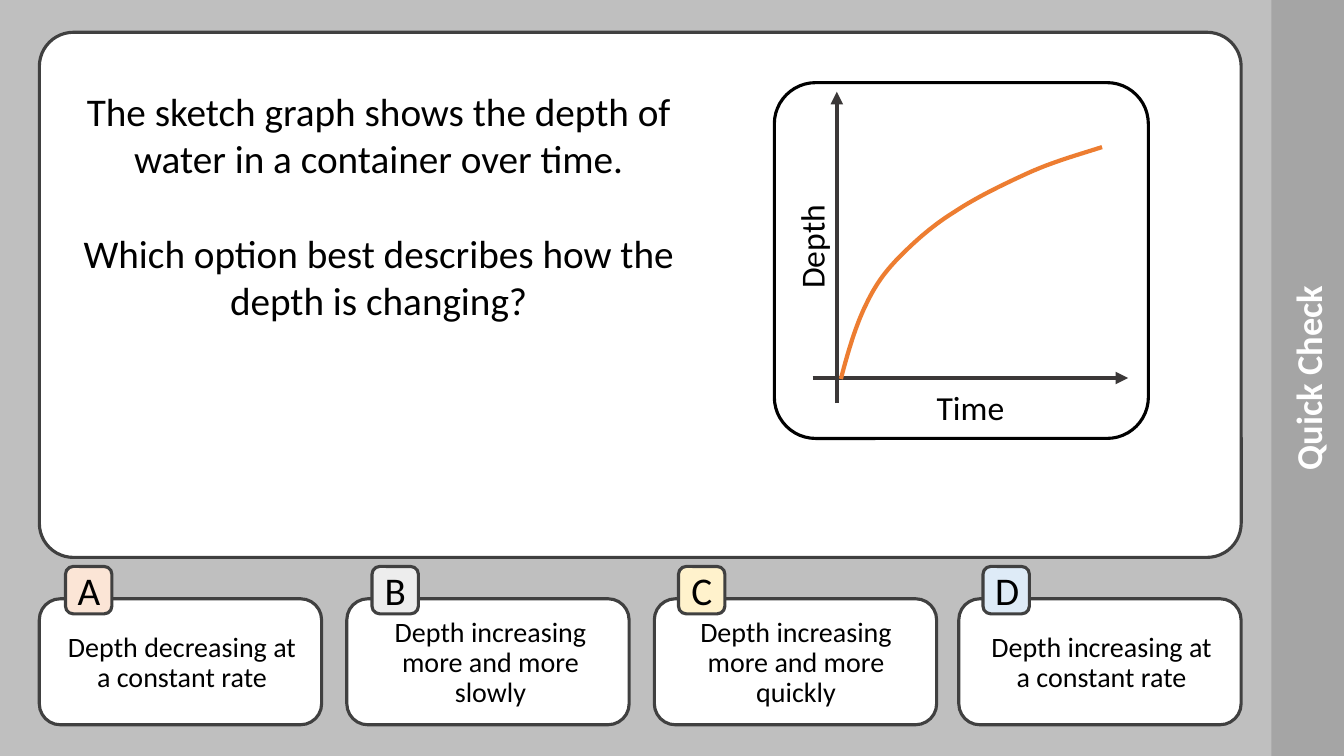
from dataclasses import dataclass

from lxml import etree
from pptx import Presentation
from pptx.dml.color import RGBColor
from pptx.enum.shapes import MSO_CONNECTOR, MSO_SHAPE
from pptx.enum.text import MSO_ANCHOR, MSO_AUTO_SIZE, PP_ALIGN
from pptx.oxml.ns import qn
from pptx.util import Inches, Pt

HUES = {
    "back": "BFBFBF", "band": "A5A5A5", "white": "FFFFFF", "black": "000000",
    "edge": "404040", "axis": "3B3838", "curve": "ED7D31",
    "A": "FBE5D6", "B": "EDEDED", "C": "FFF2CC", "D": "DEEBF7",
}
INSETS = ("margin_left", "margin_top", "margin_right", "margin_bottom")

Box = tuple[float, float, float, float]
Point = tuple[float, float]


@dataclass
class Answer:
    key: str
    text: str
    card: float
    badge: float
    label: float


@dataclass
class Axis:
    start: Point
    end: Point


ANSWERS = [
    Answer("A", "Depth decreasing at a constant rate", 0.39, 0.65, 0.65),
    Answer("B", "Depth increasing more and more slowly", 3.44, 3.69, 3.71),
    Answer("C", "Depth increasing more and more quickly", 6.49, 6.73, 6.74),
    Answer("D", "Depth increasing at a constant rate", 9.51, 9.75, 9.77),
]
AXES = [Axis((8.06, 3.75), (11.19, 3.75)), Axis((8.3, 4), (8.3, 0.91))]
QUESTION = [
    "The sketch graph shows the depth of water in a container over time.",
    "Which option best describes how the depth is changing?",
]
# Start point, then two handles and an end point per Bezier piece
CURVE = [
    (10.93, 1.46), (10.68, 1.54), (10.43, 1.61), (10.19, 1.72),
    (9.95, 1.83), (9.68, 1.96), (9.47, 2.1),
    (9.26, 2.23), (9.09, 2.38), (8.94, 2.53),
    (8.79, 2.68), (8.69, 2.81), (8.59, 3.02),
    (8.49, 3.22), (8.41, 3.49), (8.34, 3.76),
]


def tint(hue: str) -> RGBColor:
    return RGBColor.from_string(HUES[hue])


def stroke(line, hue: str, width: float) -> None:
    line.color.rgb = tint(hue)
    line.width = Pt(width)


def write(shape, lines: list[str], size: float, hue: str = "black",
          bold: bool = False, inset: bool = True, **spacing) -> None:
    """Fill a shape with centred paragraphs."""
    frame = shape.text_frame
    frame.word_wrap = True
    frame.auto_size = MSO_AUTO_SIZE.NONE
    if not inset:
        for side in INSETS:
            setattr(frame, side, 0)
    frame.text = "\n".join(lines)
    for para in frame.paragraphs:
        para.alignment = PP_ALIGN.CENTER
        for name, value in spacing.items():
            setattr(para, name, value)
        looks = {"name": "Calibri", "size": Pt(size), "bold": bold}
        for run in para.runs:
            for name, value in looks.items():
                setattr(run.font, name, value)
            run.font.color.rgb = tint(hue)


def panel(slide, box: Box, fill: str = "white", edge: str = "edge",
          bend: float = 0.1667):
    """Draw a rounded, outlined box."""
    shape = slide.shapes.add_shape(
        MSO_SHAPE.ROUNDED_RECTANGLE, *map(Inches, box))
    shape.adjustments[0] = bend
    shape.shadow.inherit = False
    shape.fill.solid()
    shape.fill.fore_color.rgb = tint(fill)
    stroke(shape.line, edge, 2.25)
    return shape


def label(slide, box: Box, lines: list[str], size: float, **looks):
    shape = slide.shapes.add_textbox(*map(Inches, box))
    write(shape, lines, size, **looks)
    return shape


def arrow(slide, axis: Axis) -> None:
    link = slide.shapes.add_connector(
        MSO_CONNECTOR.STRAIGHT, *map(Inches, axis.start + axis.end))
    stroke(link.line, "axis", 3)
    ln = link.line._get_or_add_ln()
    etree.SubElement(ln, qn("a:tailEnd"), type="triangle")
    etree.SubElement(link._element.spPr, qn("a:effectLst"))


def trace(nodes: list[Point], steps: int = 16) -> list[Point]:
    """Sample the points along a chain of cubic Bezier pieces."""
    dots = [nodes[0]]
    for i in range(0, len(nodes) - 1, 3):
        piece = nodes[i:i + 4]
        for n in range(1, steps + 1):
            t = n / steps
            parts = ((1 - t) ** 3, 3 * t * (1 - t) ** 2,
                     3 * t * t * (1 - t), t ** 3)
            dots.append((sum(w * p[0] for w, p in zip(parts, piece)),
                         sum(w * p[1] for w, p in zip(parts, piece))))
    return dots


def plot(slide) -> None:
    dots = [(Inches(x), Inches(y)) for x, y in trace(CURVE)]
    pen = slide.shapes.build_freeform(*dots[0])
    pen.add_line_segments(dots[1:], close=False)
    shape = pen.convert_to_shape()
    shape.shadow.inherit = False
    shape.fill.background()
    stroke(shape.line, "curve", 3)


def main() -> None:
    deck = Presentation()
    deck.slide_width, deck.slide_height = Inches(13.33), Inches(7.5)
    slide = deck.slides.add_slide(deck.slide_layouts[5])
    slide.background.fill.solid()
    slide.background.fill.fore_color.rgb = tint("back")

    # Side band with the title
    title = slide.shapes.title
    place = {"left": 9.22, "top": 3.39, "width": 7.5, "height": 0.72}
    for name, value in place.items():
        setattr(title, name, Inches(value))
    title.rotation = 270
    title.fill.solid()
    title.fill.fore_color.rgb = tint("band")
    write(title, ["Quick Check"], 26, hue="white", bold=True, inset=False)
    title.text_frame.vertical_anchor = MSO_ANCHOR.MIDDLE

    # Question
    panel(slide, (0.39, 0.32, 11.92, 5.21), bend=0.065)
    ask = label(slide, (0.65, 0.82, 6.21, 2.93), QUESTION, 28)
    ask.text_frame.paragraphs[1].space_before = Pt(34)

    # Sketch graph
    panel(slide, (7.68, 0.82, 3.71, 3.53), edge="black", bend=0.116)
    for axis in AXES:
        arrow(slide, axis)
    label(slide, (8.06, 3.79, 3.13, 0.5), ["Time"], 24)
    label(slide, (6.5, 2.2, 3.09, 0.5), ["Depth"], 24).rotation = 270
    plot(slide)

    # Answers
    for item in ANSWERS:
        panel(slide, (item.card, 5.94, 2.8, 1.25))
        badge = panel(slide, (item.badge, 5.62, 0.46, 0.47), item.key)
        write(badge, [item.key], 28)
        text = label(slide, (item.label, 5.95, 2.31, 1.26), [item.text], 20,
                     inset=False, line_spacing=0.9, space_before=Pt(10))
        for shape in (badge, text):
            shape.text_frame.vertical_anchor = MSO_ANCHOR.MIDDLE

    deck.save("out.pptx")


if __name__ == "__main__":
    main()
